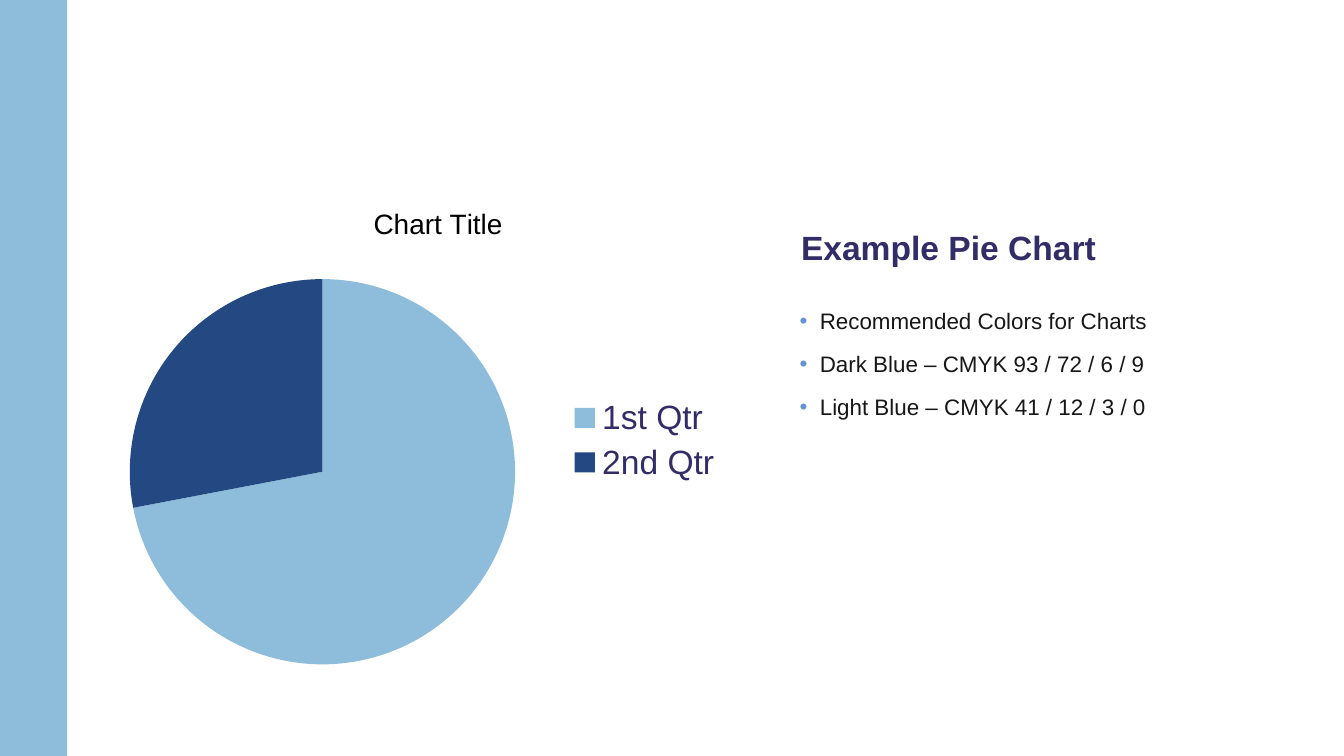
import pptx
import pptx.chart.data
import pptx.dml.color
import pptx.enum.chart
import pptx.enum.text
import pptx.oxml
import pptx.oxml.ns
import pptx.util

RGB = pptx.dml.color.RGBColor
LIGHT = RGB(0x8E, 0xBD, 0xDB)
DARK = RGB(0x23, 0x48, 0x82)
NAVY = RGB(0x32, 0x2D, 0x66)
BLACK = RGB(0x00, 0x00, 0x00)
INK = RGB(0x18, 0x17, 0x17)
DOT = "6393D1"
FACE = "Arial"
Pt = pptx.util.Pt

deck = pptx.Presentation()
deck.slide_width = Pt(720)
deck.slide_height = Pt(405)
slide = deck.slides.add_slide(deck.slide_layouts[5])


def place(left, top, width, height):
    """Turn percentages of the slide's size into lengths."""
    wide, high = deck.slide_width / 100, deck.slide_height / 100
    return int(left * wide), int(top * high), int(width * wide), int(height * high)


def layout(part, **shares):
    """Fix a chart part at the given shares of the chart's size."""
    tags = "".join(f'<c:{key}Mode val="edge"/>' for key in "xy")
    tags += "".join(f'<c:{key} val="{val}"/>' for key, val in shares.items())
    target = '<c:layoutTarget val="inner"/>' if "w" in shares else ""
    space = pptx.oxml.ns.nsdecls("c")
    for old in part.findall(pptx.oxml.ns.qn("c:layout")):
        part.remove(old)
    return pptx.oxml.parse_xml(
        f"<c:layout {space}><c:manualLayout>{target}{tags}</c:manualLayout></c:layout>")


# Side band
band = slide.shapes.add_shape(1, *place(0, 0, 5, 100))
band.shadow.inherit = False
band.fill.solid()
band.fill.fore_color.rgb = LIGHT
band.line.fill.background()

# Pie chart
data = pptx.chart.data.CategoryChartData()
data.categories = ["1st Qtr", "2nd Qtr"]
data.add_series("Series 1", [72, 28])
kind = pptx.enum.chart.XL_CHART_TYPE.PIE
chart = slide.shapes.add_chart(kind, *place(5.9, 25.96, 48.9, 64.53), data).chart
chart.font.name = FACE
chart.font.size = Pt(18)
chart.font.color.rgb = NAVY

chart.has_title = True
run = chart.chart_title.text_frame.paragraphs[0].add_run()
run.text = "Chart Title"
run.font.name = FACE
run.font.size = Pt(15)
run.font.bold = False
run.font.color.rgb = BLACK

chart.has_legend = True
chart.legend.position = pptx.enum.chart.XL_LEGEND_POSITION.RIGHT
chart.legend.include_in_layout = False

plot = chart.plots[0]
plot.vary_by_categories = True
for i, color in enumerate([LIGHT, DARK]):
    wedge = plot.series[0].points[i].format
    wedge.fill.solid()
    wedge.fill.fore_color.rgb = color
    wedge.line.fill.background()

title = chart.chart_title._element
title.insert(1, layout(title, x=0.44, y=0.01))
area = chart._chartSpace.chart.plotArea
area.insert(0, layout(area, x=0.07, y=0.17, w=0.6, h=0.79))

# Heading and list
head = slide.shapes.title
head.left, head.top, head.width, head.height = place(59.6, 30.58, 36, 8)
body = slide.shapes.add_textbox(*place(59.5, 41.07, 36.1, 43.56))
lines = [
    "Recommended Colors for Charts",
    "Dark Blue – CMYK 93 / 72 / 6 / 9",
    "Light Blue – CMYK 41 / 12 / 3 / 0",
]
for box, texts, size, color, bold in [
    (head, ["Example Pie Chart"], 18, NAVY, True),
    (body, lines, 12, INK, False),
]:
    frame = box.text_frame
    frame.word_wrap = True
    frame.auto_size = pptx.enum.text.MSO_AUTO_SIZE.NONE
    frame.vertical_anchor = pptx.enum.text.MSO_ANCHOR.TOP
    frame.margin_left = frame.margin_right = 0
    frame.margin_top = frame.margin_bottom = 0
    for i, text in enumerate(texts):
        para = frame.add_paragraph() if i else frame.paragraphs[0]
        para.alignment = pptx.enum.text.PP_ALIGN.LEFT
        para.line_spacing = 0.9
        para.space_before = Pt(10 if i else 0)
        if box is body:
            props = para._p.get_or_add_pPr()
            indent = pptx.util.Inches(0.15)
            props.set("marL", str(indent))
            props.set("indent", str(-indent))
            space = pptx.oxml.ns.nsdecls("a")
            for tag in [
                f'<a:buClr {space}><a:srgbClr val="{DOT}"/></a:buClr>',
                f'<a:buFont {space} typeface="{FACE}"/>',
                f'<a:buChar {space} char="•"/>',
            ]:
                props.append(pptx.oxml.parse_xml(tag))
        run = para.add_run()
        run.text = text
        run.font.name = FACE
        run.font.size = Pt(size)
        run.font.bold = bold
        run.font.color.rgb = color

deck.save("out.pptx")
